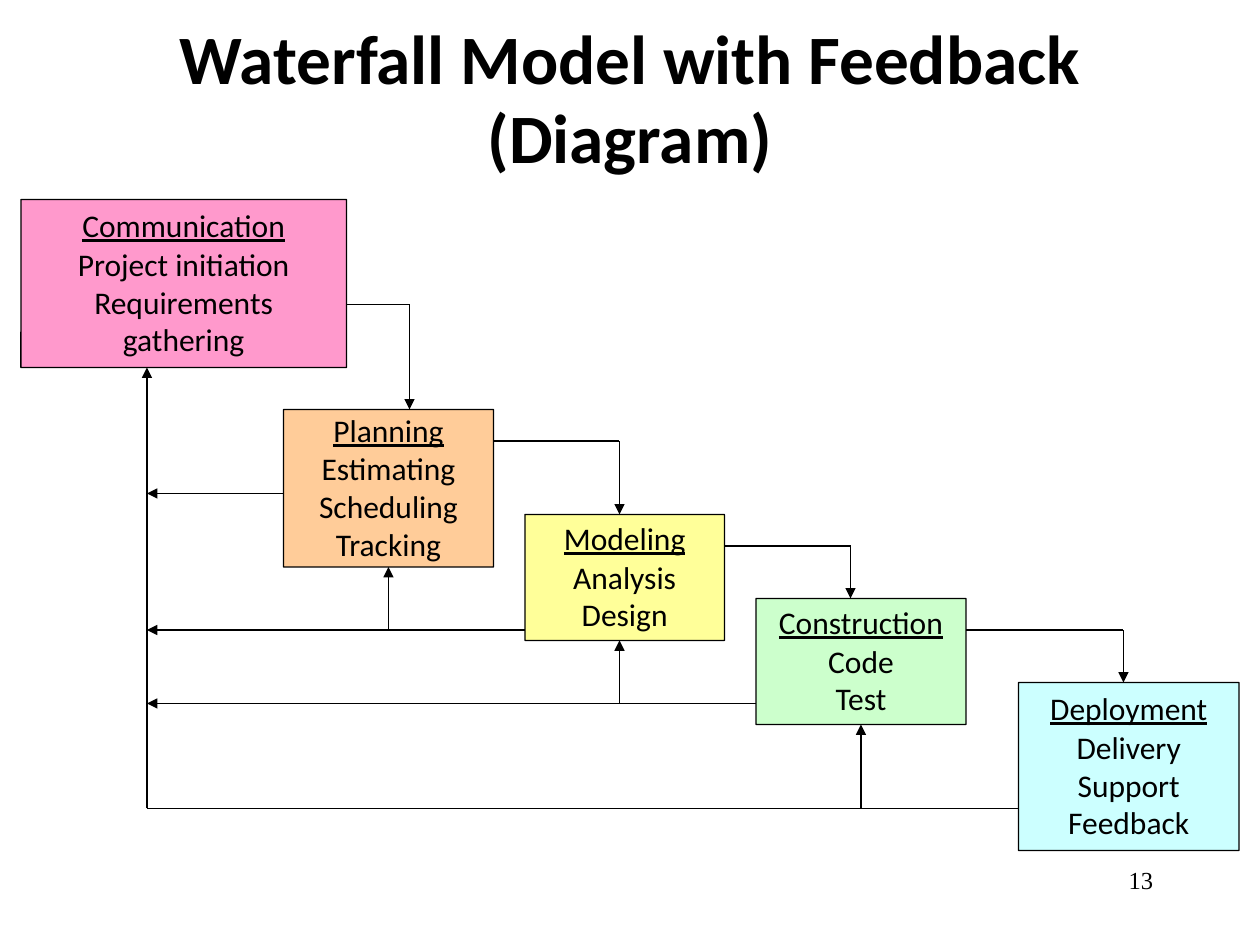
import pptx
import pptx.util
import lxml.etree
from pptx.dml.color import RGBColor
from pptx.enum.shapes import MSO_CONNECTOR, MSO_SHAPE
from pptx.enum.text import MSO_ANCHOR, PP_ALIGN
from pptx.oxml.ns import qn

PX = 9525  # EMU in one px, 96 px to the inch
BLACK = RGBColor(0x00, 0x00, 0x00)
PINK = RGBColor(0xFF, 0x99, 0xCC)
ORANGE = RGBColor(0xFF, 0xCC, 0x99)
YELLOW = RGBColor(0xFF, 0xFF, 0x99)
GREEN = RGBColor(0xCC, 0xFF, 0xCC)
CYAN = RGBColor(0xCC, 0xFF, 0xFF)

# Heading, tasks, fill, box (left, top, width, height)
PHASES = [
    ("Communication", ["Project initiation", "Requirements gathering"], PINK, (16, 152, 248, 128)),
    ("Planning", ["Estimating", "Scheduling", "Tracking"], ORANGE, (216, 312, 160, 120)),
    ("Modeling", ["Analysis", "Design"], YELLOW, (400, 392, 152, 96)),
    ("Construction", ["Code", "Test"], GREEN, (576, 456, 160, 96)),
    ("Deployment", ["Delivery", "Support", "Feedback"], CYAN, (776, 520, 168, 128)),
]
# From each phase to the next: exit below the phase top, entry x in the next phase
FORWARD = [(80, 96), (24, 72), (24, 72), (24, 80)]
# From each later phase: exit below its top, and entry x in the phase before it
FEEDBACK = [(64, None), (88, 80), (80, 72), (96, 80)]
TRUNK_X = 112


def emu(box):
    return [length * PX for length in box]


def add_run(paragraph, text, size, font="Calibri", bold=False, underline=False):
    run = paragraph.add_run()
    run.text = text
    run.font.name = font
    run.font.size = pptx.util.Pt(size)
    run.font.bold = bold
    run.font.underline = underline
    run.font.color.rgb = BLACK


def add_text_box(slide, box, alignment, anchor):
    """Add an empty wrapped text box and return its first paragraph."""
    frame = slide.shapes.add_textbox(*emu(box)).text_frame
    frame.word_wrap = True
    frame.vertical_anchor = anchor
    paragraph = frame.paragraphs[0]
    paragraph.alignment = alignment
    paragraph.line_spacing = 0.95
    return paragraph


def add_title(slide, box):
    paragraph = add_text_box(slide, box, PP_ALIGN.CENTER, MSO_ANCHOR.MIDDLE)
    add_run(paragraph, "Waterfall Model with Feedback", 39.6, bold=True)
    paragraph.add_line_break()
    add_run(paragraph, "(Diagram)", 39.6, bold=True)


def add_page_number(slide, box):
    paragraph = add_text_box(slide, box, PP_ALIGN.RIGHT, MSO_ANCHOR.TOP)
    add_run(paragraph, "13", 14, font="Times New Roman")


def add_phase(slide, heading, tasks, fill, box):
    shape = slide.shapes.add_shape(MSO_SHAPE.ROUNDED_RECTANGLE, *emu(box))
    shape.adjustments[0] = 0.002
    shape.shadow.inherit = False
    shape.fill.solid()
    shape.fill.fore_color.rgb = fill
    shape.line.color.rgb = BLACK
    shape.line.width = pptx.util.Pt(0.75)
    frame = shape.text_frame
    frame.word_wrap = True
    frame.vertical_anchor = MSO_ANCHOR.MIDDLE
    for index, text in enumerate([heading] + tasks):
        paragraph = frame.add_paragraph() if index else frame.paragraphs[0]
        paragraph.alignment = PP_ALIGN.CENTER
        paragraph.line_spacing = 1.0 if index else 0.95
        add_run(paragraph, text, 18, underline=index == 0)


def add_line(slide, start, end, arrow=True):
    line = slide.shapes.add_connector(MSO_CONNECTOR.STRAIGHT, *emu(start + end))
    line.line.color.rgb = BLACK
    line.line.width = pptx.util.Pt(0.75)
    if arrow:
        outline = line.line._get_or_add_ln()
        lxml.etree.SubElement(outline, qn("a:tailEnd"), type="triangle")
    lxml.etree.SubElement(line._element.spPr, qn("a:effectLst"))


def add_forward_step(slide, box, next_box, exit_y, entry_x):
    left, top, width, _ = box
    corner = (next_box[0] + entry_x, top + exit_y)
    add_line(slide, (left + width, top + exit_y), corner, arrow=False)
    add_line(slide, corner, (corner[0], next_box[1]))


def add_feedback(slide, box, previous_box, exit_y, entry_x, arrow):
    """Run left from a phase to the trunk, branching up to the phase before."""
    y = box[1] + exit_y
    add_line(slide, (box[0], y), (TRUNK_X, y), arrow)
    if entry_x is not None:
        x = previous_box[0] + entry_x
        add_line(slide, (x, y), (x, previous_box[1] + previous_box[3]))


def add_waterfall(slide):
    for phase in PHASES:
        add_phase(slide, *phase)
    boxes = [phase[-1] for phase in PHASES]
    pairs = list(zip(boxes, boxes[1:]))
    for (box, next_box), step in zip(pairs, FORWARD):
        add_forward_step(slide, box, next_box, *step)
    for (previous_box, box), step in zip(pairs, FEEDBACK):
        add_feedback(slide, box, previous_box, *step, arrow=box != boxes[-1])
    trunk_bottom = boxes[-1][1] + FEEDBACK[-1][0]
    add_line(slide, (TRUNK_X, trunk_bottom), (TRUNK_X, boxes[0][1] + boxes[0][3]))


def main():
    presentation = pptx.Presentation()
    presentation.slide_width, presentation.slide_height = emu((960, 720))
    slide = presentation.slides.add_slide(presentation.slide_layouts[6])
    add_page_number(slide, (688, 656, 200, 48))
    add_title(slide, (72, 5, 816, 143))
    add_waterfall(slide)
    presentation.save("out.pptx")


if __name__ == "__main__":
    main()
